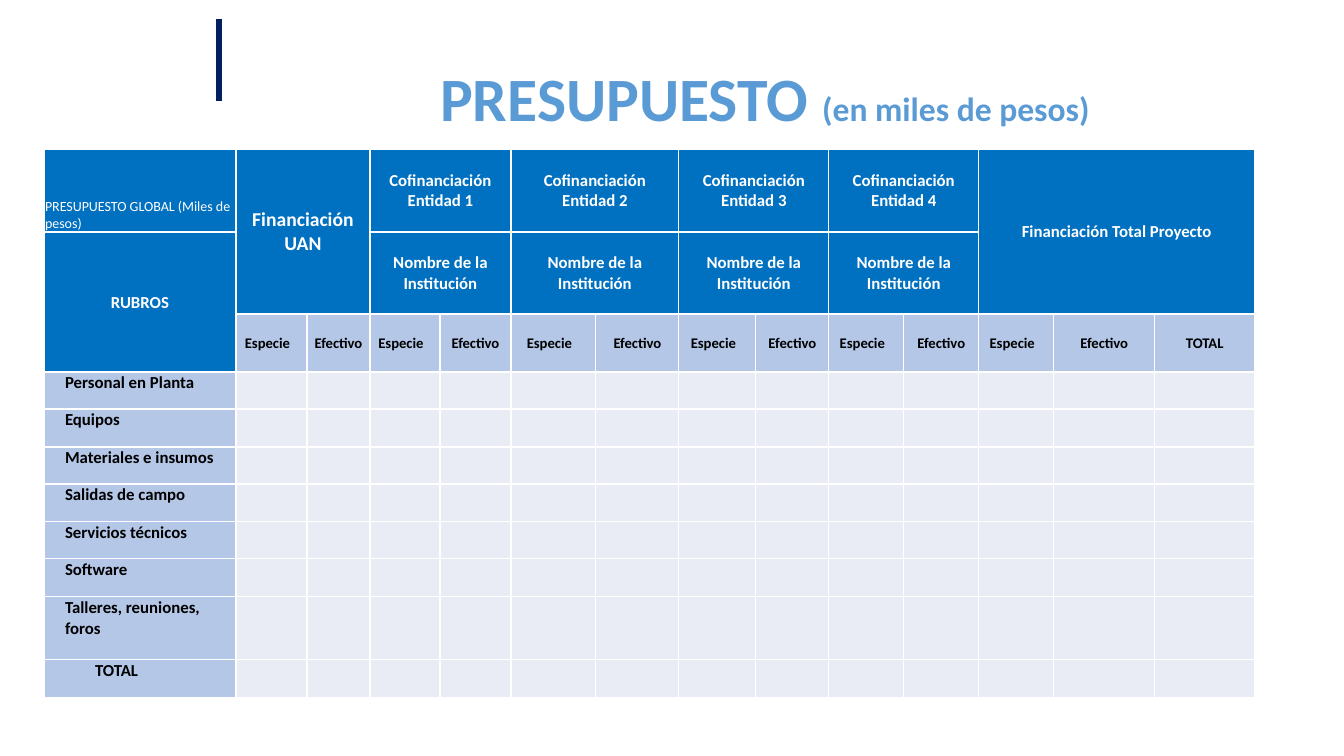
from dataclasses import dataclass
from lxml.etree import SubElement
from pptx import Presentation
from pptx.dml.color import RGBColor
from pptx.enum.shapes import MSO_CONNECTOR
from pptx.enum.text import MSO_ANCHOR as Anchor, MSO_AUTO_SIZE as AutoSize, PP_ALIGN as Align
from pptx.oxml import parse_xml
from pptx.oxml.ns import nsdecls, qn
from pptx.util import Emu, Pt

EMU_PER_PX = 914400 / 100.8


@dataclass(frozen=True)
class Theme:
    font: str = "Calibri"
    navy: str = "002060"
    sky: str = "5B9BD5"
    header: str = "0070C0"
    label: str = "B4C7E7"
    blank: str = "E9EBF5"
    white: str = "FFFFFF"
    black: str = "000000"
    title: float = 44
    subtitle: float = 24
    lead: float = 14
    body: float = 12
    kind: float = 10.5
    note: float = 10


THEME = Theme()

TITLE = [("PRESUPUESTO ", THEME.title), ("(en miles de pesos)", THEME.subtitle)]
NOTE = "PRESUPUESTO GLOBAL (Miles de pesos)"
MAIN_FUNDER = "Financiación\nUAN"
ENTITIES = ["Entidad 1", "Entidad 2", "Entidad 3", "Entidad 4"]
COFUNDING = "Cofinanciación"
INSTITUTION = "Nombre de la\nInstitución"
PROJECT_TOTAL = "Financiación Total Proyecto"
ITEMS_HEADING = "RUBROS"
KINDS = ["Especie", "Efectivo"] * (len(ENTITIES) + 2) + ["TOTAL"]
ITEMS = ["Personal en Planta", "Equipos", "Materiales e insumos", "Salidas de campo",
         "Servicios técnicos", "Software", "Talleres, reuniones, foros", "TOTAL"]

COLUMN_WIDTHS = [192, 71, 63, 70, 71, 85, 83, 77, 73, 75, 75, 75, 101, 100]
ROW_HEIGHTS = [83, 82, 58] + [37, 38] * 3 + [63, 38]
KIND_ROW, FIRST_ITEM_ROW = 2, 3
TABLE_LEFT, TABLE_TOP = 44, 149
ITEM_INDENT, TOTAL_INDENT = 20, 50
KIND_SHIFT = 9


def px(length):
    return Emu(round(length * EMU_PER_PX))


def color(code):
    return RGBColor.from_string(code)


def write(frame, text, size=THEME.body, fill=THEME.white, bold=True,
          align=Align.CENTER, indent=0):
    """Fill a frame: one paragraph per line; text may be (words, size) runs."""
    lines = text.split("\n") if isinstance(text, str) else [text]
    for number, line in enumerate(lines):
        paragraph = frame.add_paragraph() if number else frame.paragraphs[0]
        paragraph.alignment = align
        if indent:
            paragraph.level = 1
            properties = paragraph._p.get_or_add_pPr()
            properties.set("marL", str(px(indent)))
            properties.set("indent", "0")
        for words, points in [(line, size)] if isinstance(line, str) else line:
            run = paragraph.add_run()
            run.text = words
            run.font.name = THEME.font
            run.font.size = Pt(points)
            run.font.bold = bold
            run.font.color.rgb = color(fill)


def outline(run):
    run.font._element.insert(0, parse_xml(
        f'<a:ln {nsdecls("a")} w="9525"><a:solidFill>'
        f'<a:srgbClr val="{THEME.white}"/></a:solidFill></a:ln>'))


def paint(cell, fill):
    """Give a cell white borders, narrow margins and a fill."""
    properties = cell._tc.get_or_add_tcPr()
    for side in ("lnL", "lnR", "lnT", "lnB"):
        border = SubElement(properties, qn(f"a:{side}"), w=str(Pt(1)))
        SubElement(SubElement(border, qn("a:solidFill")), qn("a:srgbClr"), val=THEME.white)
    cell.fill.solid()
    cell.fill.fore_color.rgb = color(fill)
    cell.margin_left = cell.margin_right = cell.margin_top = px(1)
    cell.margin_bottom = 0


def cell_fill(row, column):
    if row < KIND_ROW or (row == KIND_ROW and column == 0):
        return THEME.header
    return THEME.label if row == KIND_ROW or column == 0 else THEME.blank


def add_title(slide):
    title = slide.shapes.title
    title.left, title.top, title.width, title.height = map(px, (288, 55, 954, 85))
    frame = title.text_frame
    frame.word_wrap = True
    frame.auto_size = AutoSize.SHAPE_TO_FIT_TEXT
    frame.vertical_anchor = Anchor.TOP
    write(frame, TITLE, fill=THEME.sky)
    for run in frame.paragraphs[0].runs:
        outline(run)


def add_accent(slide):
    accent = slide.shapes.add_connector(MSO_CONNECTOR.STRAIGHT, px(219), px(19), px(219), px(101))
    accent.line.color.rgb = color(THEME.navy)
    accent.line.width = Pt(4.5)
    SubElement(accent._element.spPr, qn("a:effectLst"))


def add_budget(slide):
    budget = slide.shapes.add_table(
        len(ROW_HEIGHTS), len(COLUMN_WIDTHS), px(TABLE_LEFT), px(TABLE_TOP),
        px(sum(COLUMN_WIDTHS)), px(sum(ROW_HEIGHTS))).table
    for column, width in zip(budget.columns, COLUMN_WIDTHS):
        column.width = px(width)
    for row, height in zip(budget.rows, ROW_HEIGHTS):
        row.height = px(height)
    for row in range(len(ROW_HEIGHTS)):
        for column in range(len(COLUMN_WIDTHS)):
            paint(budget.cell(row, column), cell_fill(row, column))

    def put(row, column, text, rows=1, columns=1, anchor=Anchor.MIDDLE, **text_format):
        cell = budget.cell(row, column)
        if rows * columns > 1:
            cell.merge(budget.cell(row + rows - 1, column + columns - 1))
        cell.vertical_anchor = anchor
        write(cell.text_frame, text, **text_format)
        return cell

    put(0, 0, NOTE, anchor=Anchor.BOTTOM, size=THEME.note, bold=False, align=Align.LEFT)
    put(1, 0, ITEMS_HEADING, rows=2)
    put(0, 1, MAIN_FUNDER, rows=2, columns=2, size=THEME.lead)
    for number, entity in enumerate(ENTITIES):
        column = 3 + 2 * number
        put(0, column, f"{COFUNDING}\n{entity}", columns=2)
        put(1, column, INSTITUTION, columns=2)
    put(0, 3 + 2 * len(ENTITIES), PROJECT_TOTAL, rows=2, columns=3)
    for column, kind in enumerate(KINDS, start=1):
        cell = put(KIND_ROW, column, kind, size=THEME.kind, fill=THEME.black)
        if kind == "Especie":
            cell.margin_right = px(KIND_SHIFT)
    for row, item in enumerate(ITEMS, start=FIRST_ITEM_ROW):
        put(row, 0, item, anchor=Anchor.TOP, fill=THEME.black, align=Align.LEFT,
            indent=TOTAL_INDENT if item == "TOTAL" else ITEM_INDENT)


def main():
    deck = Presentation()
    deck.slide_width, deck.slide_height = px(1344), px(756)
    slide = deck.slides.add_slide(deck.slide_layouts[5])
    add_accent(slide)
    add_title(slide)
    add_budget(slide)
    deck.save("out.pptx")


if __name__ == "__main__":
    main()
